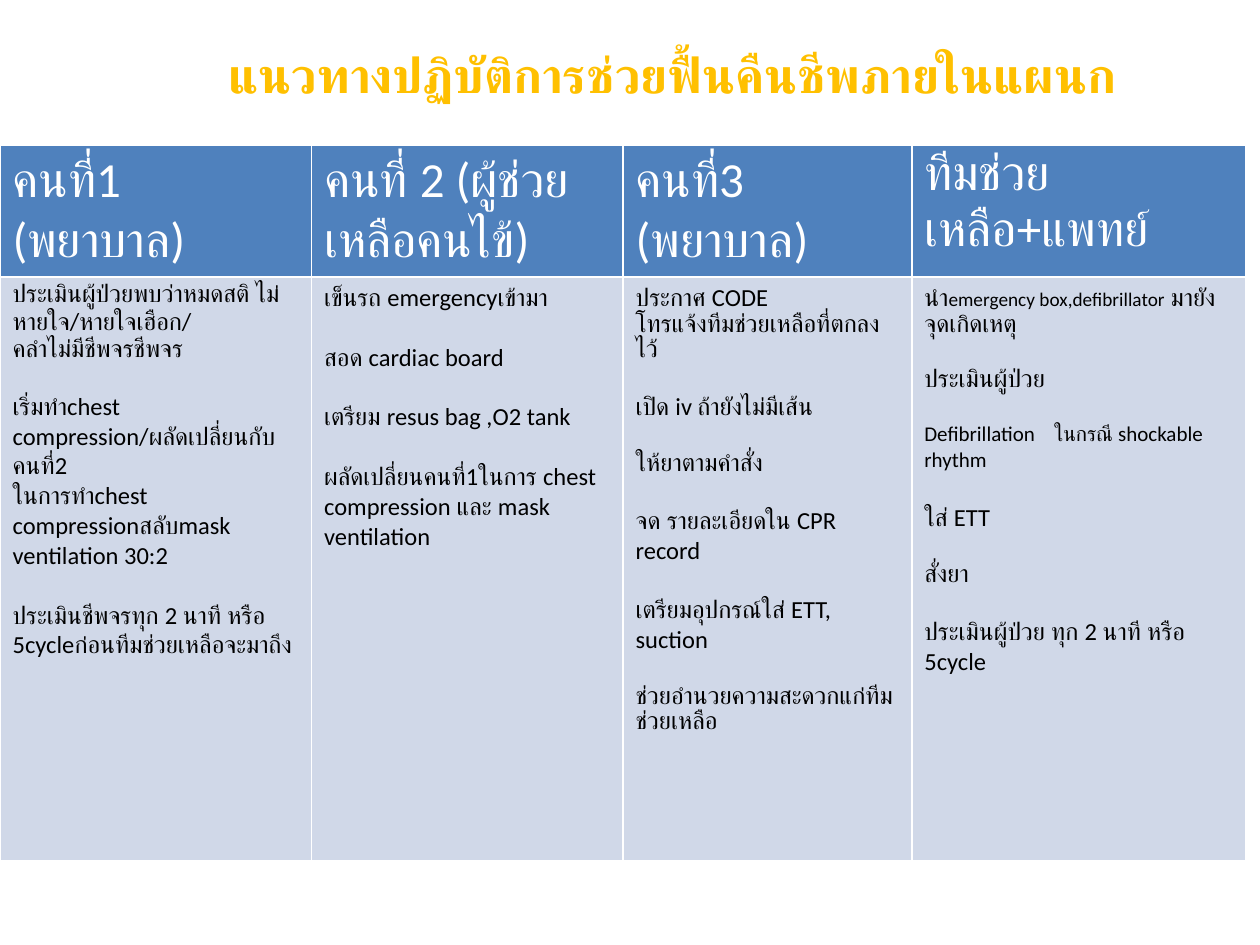
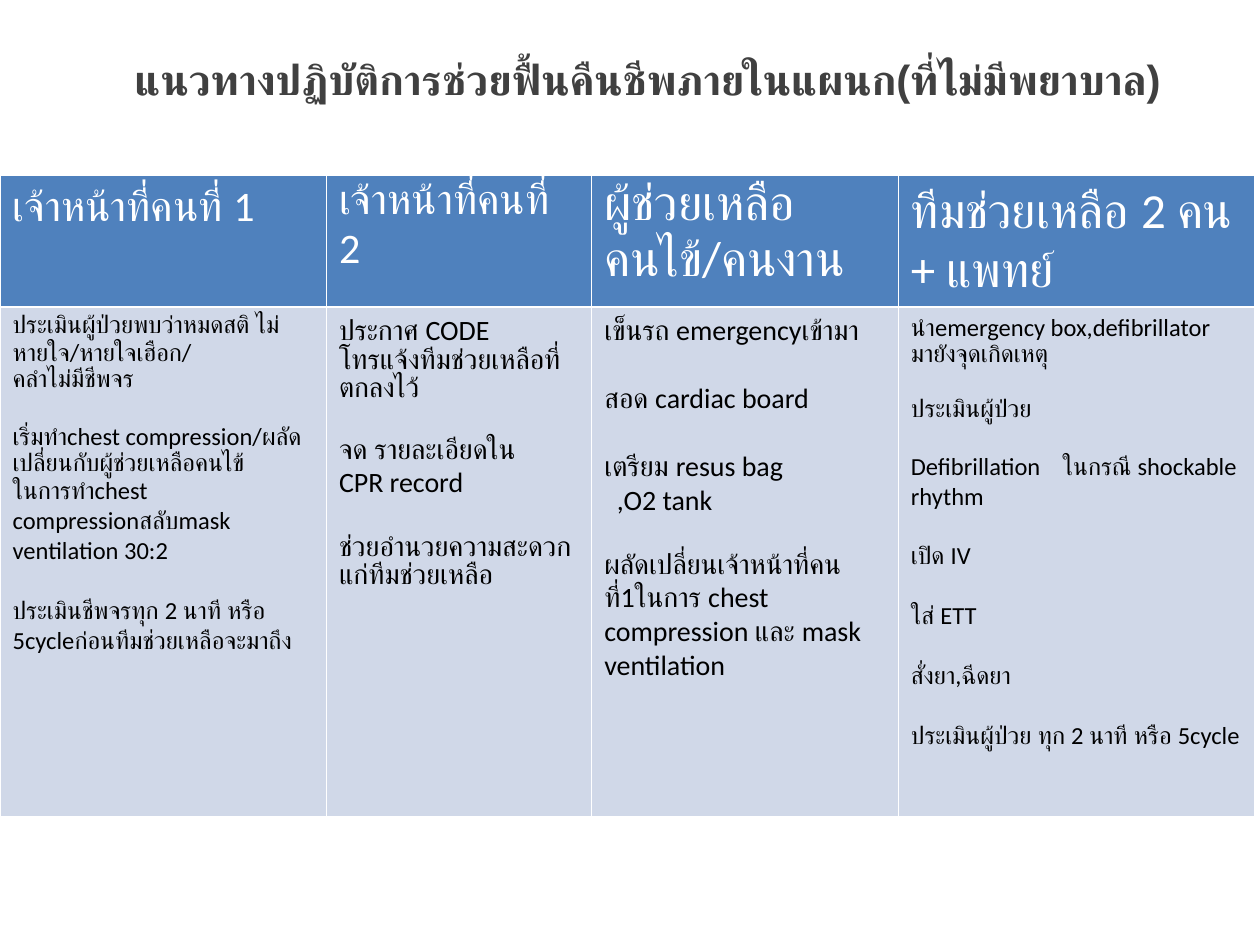
from lxml import etree
from pptx import Presentation
from pptx import util as u
from pptx.dml.color import RGBColor
from pptx.enum import lang, text
from pptx.oxml.ns import qn

COLORS = {"gold": "FFC000", "gray": "404040", "header": "4F81BD",
          "body": "D0D8E8", "white": "FFFFFF", "black": "000000"}
TITLE_FONT, TABLE_FONT = "Arial", "Calibri"
LINE = 1.22        # line height relative to the text size
HEADER_HEIGHT = 2.66

# Content: a column holds (heading, heading size, text size, blocks).
# Blocks are set apart by a line; each block is a list of paragraphs,
# and a paragraph is a string or a list of (text, size) runs.
ASSESS = "ประเมินผู้ป่วย"
EVERY_CYCLE = ["ประเมินผู้ป่วย ทุก 2 นาที หรือ 5cycle"]
UNRESPONSIVE = "ประเมินผู้ป่วยพบว่าหมดสติ ไม่หายใจ/หายใจเฮือก/"
ALTERNATE = "ในการทำchest compressionสลับmask ventilation 30:2"
PULSE = ["ประเมินชีพจรทุก 2 นาที หรือ 5cycleก่อนทีมช่วยเหลือจะมาถึง"]
ANNOUNCE = ["ประกาศ CODE", "โทรแจ้งทีมช่วยเหลือที่ตกลงไว้"]
SUPPORT = ["ช่วยอำนวยความสะดวกแก่ทีมช่วยเหลือ"]
CART = ["เข็นรถ emergencyเข้ามา"]
BOARD = ["สอด cardiac board"]
SHOCK = "Defibrillation\tในกรณี shockable rhythm"

SLIDES = [
    {
        "title": "แนวทางปฏิบัติการช่วยฟื้นคืนชีพภายในแผนก",
        "title_box": (3.1, 0, 20.9, 2.97), "title_size": 28, "title_color": "gold",
        "top": 2.92, "widths": (6.28, 6.28, 5.82, 6.73), "body_height": 11.78,
        "tab": 2.62,
        "columns": [
            ("คนที่1 (พยาบาล)", 28, 14, [
                [UNRESPONSIVE, "คลำไม่มีชีพจรชีพจร"],
                ["เริ่มทำchest compression/ผลัดเปลี่ยนกับคนที่2", ALTERNATE],
                PULSE]),
            ("คนที่ 2 (ผู้ช่วยเหลือคนไข้)", 28, 14, [
                CART, BOARD, ["เตรียม resus bag ,O2 tank"],
                ["ผลัดเปลี่ยนคนที่1ในการ chest compression และ mask ventilation"]]),
            ("คนที่3 (พยาบาล)", 28, 14, [
                ANNOUNCE, ["เปิด iv ถ้ายังไม่มีเส้น"], ["ให้ยาตามคำสั่ง"],
                ["จด รายละเอียดใน CPR record"],
                ["เตรียมอุปกรณ์ใส่ ETT, suction"], SUPPORT]),
            ("ทีมช่วยเหลือ+แพทย์", 28, 14, [
                [[("นำ", 14), ("emergency box,defibrillator", 11),
                  (" มายังจุดเกิดเหตุ", 14)]],
                [ASSESS], [[(SHOCK, 12)]], ["ใส่ ETT"], ["สั่งยา"], EVERY_CYCLE]),
        ],
    },
    {
        "title": "แนวทางปฏิบัติการช่วยฟื้นคืนชีพภายในแผนก(ที่ไม่มีพยาบาล)",
        "title_box": (0.71, 0.1, 24.69, 2.97), "title_size": 24, "title_color": "gray",
        "top": 3.53, "widths": (6.58, 5.35, 6.18, 7.19), "body_height": 10.28,
        "tab": 3.06,
        "columns": [
            ("เจ้าหน้าที่คนที่ 1", 24, 14, [
                [UNRESPONSIVE, "คลำไม่มีชีพจร"],
                ["เริ่มทำchest compression/ผลัดเปลี่ยนกับผู้ช่วยเหลือคนไข้", ALTERNATE],
                PULSE]),
            ("เจ้าหน้าที่คนที่ 2", 24, 16, [
                ANNOUNCE, ["จด รายละเอียดใน\vCPR record"], SUPPORT]),
            ("ผู้ช่วยเหลือคนไข้/คนงาน", 28, 16, [
                CART, BOARD, ["เตรียม resus bag", ",O2 tank"],
                ["ผลัดเปลี่ยนเจ้าหน้าที่คนที่1ในการ chest compression และ mask ventilation"]]),
            ("ทีมช่วยเหลือ 2 คน + แพทย์", 28, 14, [
                ["นำemergency box,defibrillator มายังจุดเกิดเหตุ"],
                [ASSESS], [SHOCK], ["เปิด IV"], ["ใส่ ETT"],
                ["สั่งยา,ฉีดยา"], EVERY_CYCLE]),
        ],
    },
]


def rgb(name):
    return RGBColor.from_string(COLORS[name])


def write(tf, blocks, size, color, font=TABLE_FONT, bold=False, align=None, tab=None):
    """Fill a text frame with blocks of paragraphs."""
    tf.word_wrap = True
    first = True
    for block in blocks:
        for i, line in enumerate(block):
            p = tf.paragraphs[0] if first else tf.add_paragraph()
            p.alignment = align
            runs = [(line, size)] if isinstance(line, str) else line
            content = "".join(t for t, _ in runs)
            pPr = p._p.get_or_add_pPr()
            if "\t" in content:
                tabs = etree.SubElement(pPr, qn("a:tabLst"))
                etree.SubElement(tabs, qn("a:tab"), pos=str(u.Cm(tab)), algn="l")
            if content.startswith(","):     # continued item
                pPr.set("marL", str(u.Cm(0.25)))
                pPr.set("indent", "0")
            if i == 0 and not first:
                p.space_before = u.Pt(round(size * LINE, 1))
            for run_text, run_size in runs:
                for n, part in enumerate(run_text.split("\v")):
                    if n:
                        p.add_line_break()
                    r = p.add_run()
                    r.text = part
                    r.font.name, r.font.size, r.font.bold = font, u.Pt(run_size), bold
                    r.font.color.rgb = rgb(color)
                    r.font.language_id = lang.MSO_LANGUAGE_ID.THAI
            first = False


def style_cell(cell, fill):
    """White hairlines around a plain filled cell."""
    tcPr = cell._tc.get_or_add_tcPr()
    for side in ("lnL", "lnR", "lnT", "lnB"):
        ln = etree.SubElement(tcPr, qn("a:" + side), w=str(u.Pt(1)))
        solid = etree.SubElement(ln, qn("a:solidFill"))
        etree.SubElement(solid, qn("a:srgbClr"), val=COLORS["white"])
    cell.fill.solid()
    cell.fill.fore_color.rgb = rgb(fill)


def add_title(s, d):
    tf = s.shapes.add_textbox(*map(u.Cm, d["title_box"])).text_frame
    tf.vertical_anchor = text.MSO_ANCHOR.MIDDLE
    write(tf, [[d["title"]]], d["title_size"], d["title_color"], font=TITLE_FONT,
          bold=True, align=text.PP_ALIGN.CENTER)


def add_roles(s, d):
    heights = (HEADER_HEIGHT, d["body_height"])
    table = s.shapes.add_table(2, len(d["columns"]), 0, u.Cm(d["top"]),
                               u.Cm(sum(d["widths"])), u.Cm(sum(heights))).table
    for row, height in zip(table.rows, heights):
        row.height = u.Cm(height)
    for c, (heading, heading_size, size, blocks) in enumerate(d["columns"]):
        table.columns[c].width = u.Cm(d["widths"][c])
        head, body = table.cell(0, c), table.cell(1, c)
        style_cell(head, "header")
        style_cell(body, "body")
        write(head.text_frame, [[heading]], heading_size, "white")
        write(body.text_frame, blocks, size, "black", tab=d["tab"])


def main():
    prs = Presentation()
    prs.slide_width, prs.slide_height = u.Cm(25.4), u.Cm(19.05)
    for d in SLIDES:
        s = prs.slides.add_slide(prs.slide_layouts[6])
        add_title(s, d)
        add_roles(s, d)
    prs.save("out.pptx")


if __name__ == "__main__":
    main()
